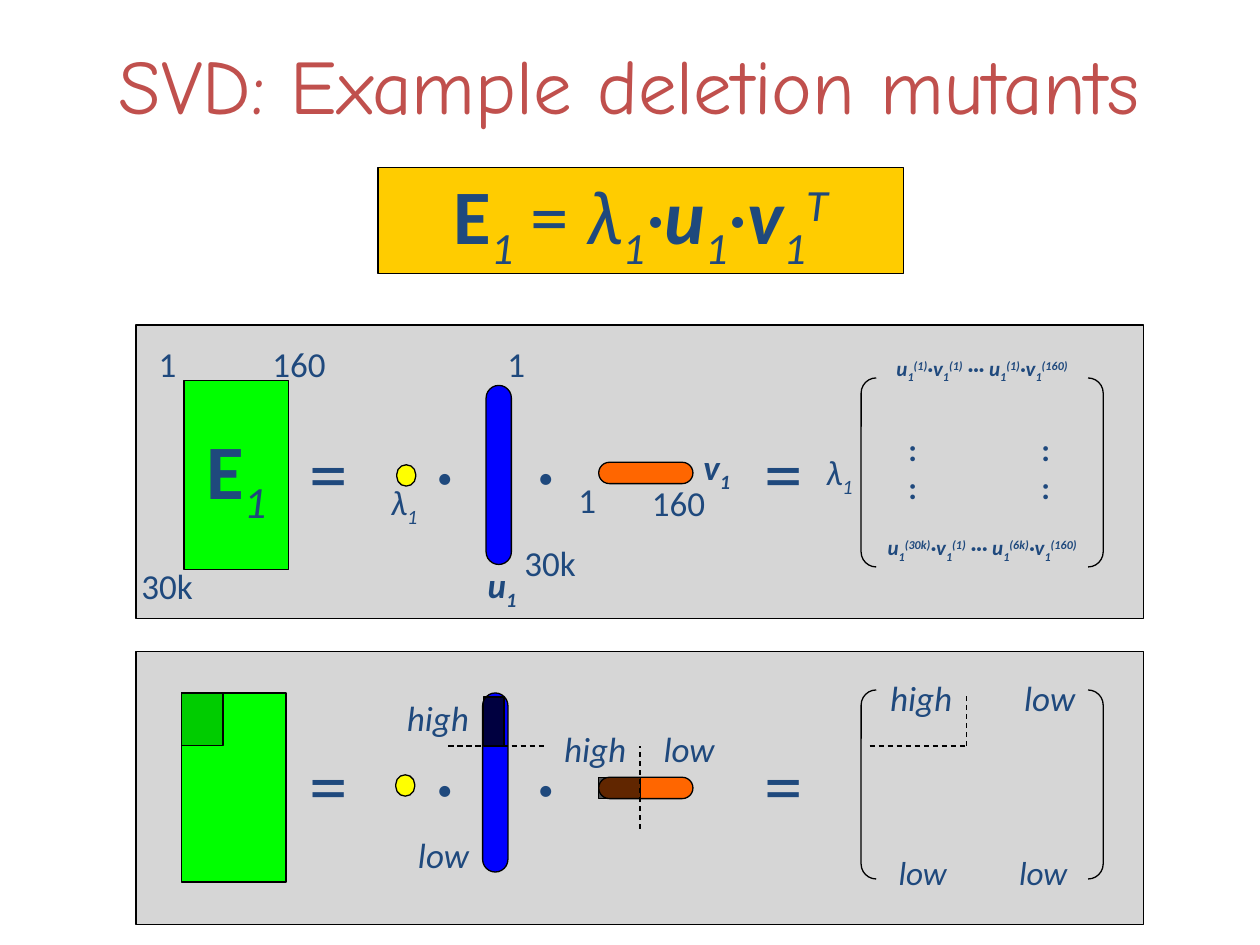
from lxml.etree import SubElement
from pptx import Presentation
from pptx.dml.color import RGBColor
from pptx.enum.dml import MSO_LINE_DASH_STYLE as Dash
from pptx.enum.shapes import MSO_CONNECTOR as Connector, MSO_SHAPE as Shape
from pptx.enum.text import MSO_ANCHOR as Anchor, PP_ALIGN as Align
from pptx.oxml.ns import qn
from pptx.util import Cm, Pt

COLORS = {
    "title": "C0504D", "text": "1F497D", "formula": "FFCC00",
    "panel": "808080", "line": "000000", "shade": "000000",
    "data": "00FF00", "lambda": "FFFF00", "u": "0000FF", "v": "FF6600",
}
BASELINES = {"-": "-25000", "^": "30000"}
LAMBDA_1 = [("λ", "i"), ("1", "i-")]
E_1 = [("E", "b"), ("1", "i-")]
PANEL_SHIFT = 6.29


def color(name):
    return RGBColor.from_string(COLORS[name])


def write(frame, runs, size, font="Calibri", tint="text"):
    paragraph = frame.paragraphs[0]
    paragraph.alignment = Align.CENTER
    base = paragraph.font
    base.name, base.size = font, Pt(size)
    base.color.rgb = color(tint)
    shared = {mark for mark in "bi" if all(mark in marks for _, marks in runs)}
    base.bold, base.italic = "b" in shared or None, "i" in shared or None
    for text, marks in runs:
        run = paragraph.add_run()
        run.text = text
        run.font.name, run.font.size = font, Pt(size)
        run.font.color.rgb = color(tint)
        run.font.bold, run.font.italic = "b" in marks, "i" in marks
        for mark in BASELINES:
            if mark in marks:
                run.font._element.set("baseline", BASELINES[mark])


def label(slide, runs, x, y, size=20, width=2):
    if isinstance(runs, str):
        runs = [(runs, "")]
    height = size * 0.043 + 0.25
    box = slide.shapes.add_textbox(
        Cm(x - width / 2), Cm(y - height / 2), Cm(width), Cm(height))
    box.text_frame.word_wrap = False
    write(box.text_frame, runs, size)


def block(slide, kind, place, fill=None, opacity=100, runs=(), size=44):
    shape = slide.shapes.add_shape(kind, *map(Cm, place))
    shape.shadow.inherit = False
    shape.line.color.rgb = color("line")
    shape.line.width = Pt(0.75)
    if fill:
        shape.fill.solid()
        shape.fill.fore_color.rgb = color(fill)
    else:
        shape.fill.background()
    if opacity < 100:
        tone = shape._element.spPr.find(qn("a:solidFill"))[0]
        SubElement(tone, qn("a:alpha")).set("val", str(opacity * 1000))
    if runs:
        shape.text_frame.vertical_anchor = Anchor.MIDDLE
        shape.text_frame.word_wrap = False
        write(shape.text_frame, runs, size)
    return shape


def pill(slide, place, fill):
    block(slide, Shape.ROUNDED_RECTANGLE, place, fill).adjustments[0] = 0.5


def divider(slide, *ends):
    line = slide.shapes.add_connector(Connector.STRAIGHT, *map(Cm, ends))
    line.line.color.rgb = color("line")
    line.line.width = Pt(0.75)
    line.line.dash_style = Dash.DASH
    SubElement(line._element.spPr, qn("a:effectLst"))


def product(row, column):
    return [("u", "bi"), ("1", "bi-"), (f"({row})", "bi^"),
            ("·v", "bi"), ("1", "bi-"), (f"({column})", "bi^")]


def matrix_row(first, last):
    return product(first, 1) + [(" ··· ", "bi")] + product(last, 160)


def equation(slide, panel, data, u, scale, v, shift=0, runs=()):
    block(slide, Shape.RECTANGLE, (2.74, *panel), "panel", 32)
    block(slide, Shape.RECTANGLE, (*data, 2.11, 3.81), "data", runs=runs)
    pill(slide, (*u, 0.51, 3.61), "u")
    pill(slide, (*scale, 0.38, 0.43), "lambda")
    pill(slide, (*v, 1.9, 0.43), "v")
    for sign, x in (("=", 6.63), ("·", 8.98), ("·", 11.01), ("=", 15.8)):
        label(slide, sign, x, 9.51 + shift, 44)
    bracket = block(slide, Shape.DOUBLE_BRACKET, (17.36, 7.62 + shift, 4.88, 3.81))
    bracket.adjustments[0] = 0.08


def heading(slide):
    box = slide.shapes.add_textbox(0, 0, Cm(25.4), Cm(3.38))
    box.text_frame.word_wrap = True
    box.text_frame.vertical_anchor = Anchor.MIDDLE
    write(box.text_frame, [("SVD: Example deletion mutants", "")], 44,
          "Comic Neue", "title")
    formula = E_1 + [(" = ", "")] + LAMBDA_1 + [
        ("·", "i"), ("u", "bi"), ("1", "i-"),
        ("·", "i"), ("v", "bi"), ("1", "i-"), ("T", "i^")]
    block(slide, Shape.RECTANGLE, (7.62, 3.38, 10.59, 2.13), "formula", runs=formula)


def dimensions(slide):
    equation(slide, (6.55, 20.32, 5.92), (3.71, 7.67), (9.8, 7.77),
             (8, 9.37), (12.07, 9.32), runs=E_1)
    for text, x, y in (
            ("1", 3.38, 7.34), ("160", 6.03, 7.34), ("30k", 3.37, 11.81),
            ("1", 10.41, 7.34), ("30k", 11.09, 11.35),
            ("1", 11.84, 10.07), ("160", 13.68, 10.13),
            (LAMBDA_1, 8.15, 10.12), (LAMBDA_1, 16.92, 9.51),
            ([("u", "bi"), ("1", "bi-")], 10.12, 11.8),
            ([("v", "bi"), ("1", "bi-")], 14.45, 9.41)):
        label(slide, text, x, y)
    label(slide, matrix_row("1", "1"), 19.8, 7.43, 12, 4.5)
    label(slide, matrix_row("30k", "6k"), 19.8, 11.04, 12, 4.5)
    for x in (18.4, 21.08):
        for y in (9.05, 9.82):
            label(slide, [(":", "b")], x, y, 18, 1)


def expression(slide):
    equation(slide, (13.13, 20.32, 5.51), (3.66, 13.97), (9.73, 13.97),
             (7.98, 15.62), (12.07, 15.67), PANEL_SHIFT)
    for place, opacity in (((3.66, 13.97, 0.84, 1.06), 20),
                           ((9.75, 14.05, 0.41, 0.99), 75),
                           ((12.07, 15.67, 0.84, 0.43), 62)):
        block(slide, Shape.RECTANGLE, place, "shade", opacity)
    divider(slide, 9.04, 15.04, 11, 15.04)
    divider(slide, 12.9, 16.71, 12.9, 15.04)
    divider(slide, 17.53, 15.04, 19.48, 15.04)
    divider(slide, 19.48, 15.04, 19.48, 13.97)
    for level, x, y, size in (
            ("high", 8.83, 14.47, 20), ("low", 8.94, 17.23, 20),
            ("high", 12, 15.1, 20), ("low", 13.89, 15.1, 20),
            ("high", 18.57, 14.07, 20), ("low", 21.16, 14.07, 20),
            ("low", 18.6, 17.58, 19), ("low", 21.03, 17.58, 19)):
        label(slide, [(level, "i")], x, y, size)


def main():
    deck = Presentation()
    deck.slide_width, deck.slide_height = Cm(25.4), Cm(19.05)
    slide = deck.slides.add_slide(deck.slide_layouts[6])
    heading(slide)
    dimensions(slide)
    expression(slide)
    deck.save("out.pptx")


if __name__ == "__main__":
    main()
